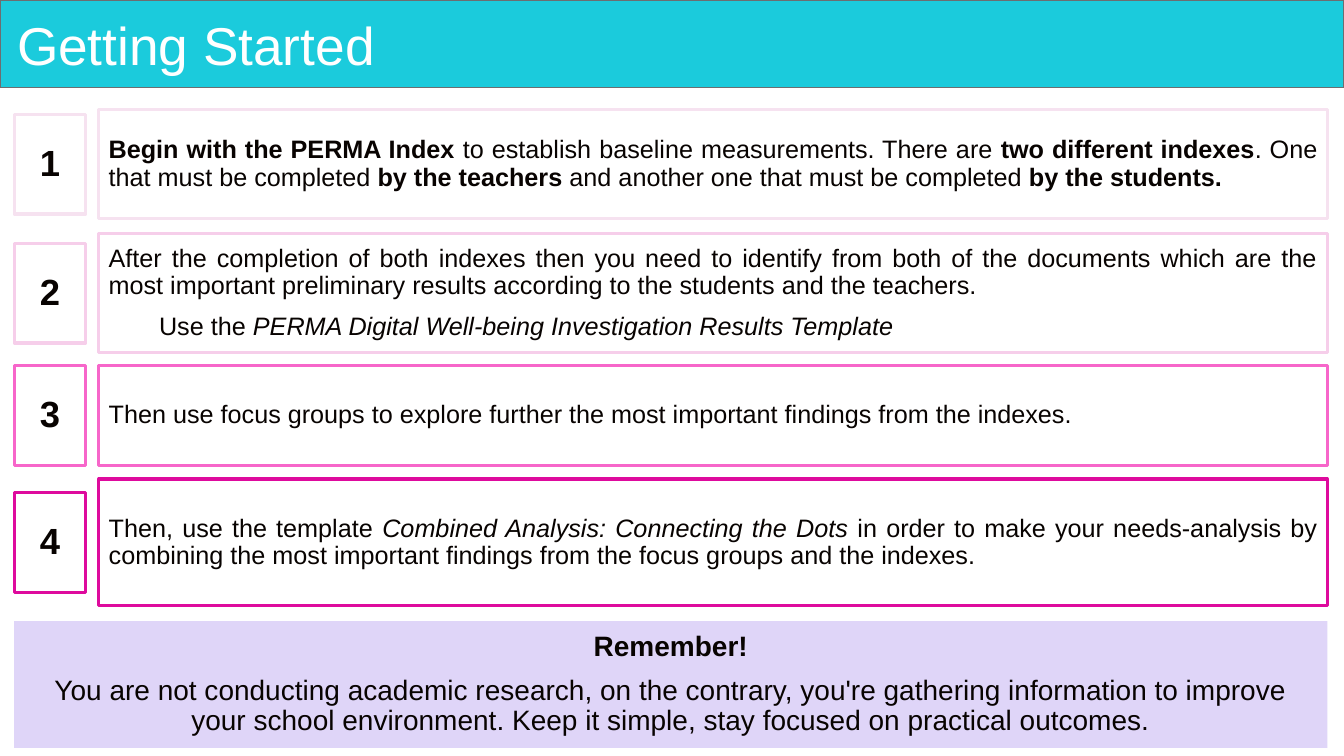
"""Build the Getting Started slide: a title bar, four numbered steps and a reminder."""
from dataclasses import dataclass

import pptx
import pptx.dml.color
import pptx.enum.shapes
import pptx.enum.text
import pptx.util

Cm = pptx.util.Cm
Pt = pptx.util.Pt
Align = pptx.enum.text.PP_ALIGN


@dataclass(frozen=True)
class Theme:
    """Colours, font and type sizes of the slide."""
    font: str = "Arial"
    ink: str = "080301"
    title_ink: str = "FFFFFF"
    bar: str = "1BCBDC"
    bar_line: str = "6C6E70"
    reminder: str = "DFD5F8"
    steps: tuple = ("F6E2F0", "F6CEEA", "F766CA", "DE0A9D")
    title_size: float = 38
    number_size: float = 26
    reminder_size: float = 20
    step_size: float = 18


THEME = Theme()
SLIDE_WIDTH, SLIDE_HEIGHT = 33.87, 19.05
NUMBER_LEFT, NUMBER_WIDTH, NUMBER_HEIGHT = 0.36, 1.8, 2.51
STEP_LEFT, STEP_WIDTH = 2.49, 30.96

STEPS = [
    (2.77, 2.74, [[
        ("Begin with the PERMA Index", "bold"),
        (" to establish baseline measurements. There are ", ""),
        ("two different indexes", "bold"),
        (". One that must be completed ", ""),
        ("by the teachers", "bold"),
        (" and another one that must be completed ", ""),
        ("by the students.", "bold"),
    ]]),
    (5.89, 3.0, [
        [("After the completion of both indexes then you need to identify from both of "
          "the documents which are the most important preliminary results according to "
          "the students and the teachers.", "")],
        [("Use the ", ""),
         ("PERMA Digital Well-being Investigation Results Template", "italic")],
    ]),
    (9.22, 2.51, [[
        ("Then use focus groups to explore further the most important findings from "
         "the indexes.", ""),
    ]]),
    (12.07, 3.2, [[
        ("Then, use the template ", ""),
        ("Combined Analysis: Connecting the Dots", "italic"),
        (" in order to make your needs-analysis by combining the most important "
         "findings from the focus groups and the indexes.", ""),
    ]]),
]

REMINDER = [
    [("Remember!", "bold")],
    [("You are not conducting academic research, on the contrary, you're gathering "
      "information to improve your school environment. Keep it simple, stay focused "
      "on practical outcomes.", "")],
]


def rgb(value):
    """Return a colour from its hexadecimal text."""
    return pptx.dml.color.RGBColor.from_string(value)


def add_box(slide, left, top, width, height, fill=None, line=None, line_width=2.25):
    """Add a flat rectangle, measured in centimetres."""
    shape = slide.shapes.add_shape(
        pptx.enum.shapes.MSO_SHAPE.RECTANGLE, Cm(left), Cm(top), Cm(width), Cm(height))
    shape.shadow.inherit = False
    if fill:
        shape.fill.solid()
        shape.fill.fore_color.rgb = rgb(fill)
    else:
        shape.fill.background()
    if line:
        shape.line.color.rgb = rgb(line)
        shape.line.width = Pt(line_width)
    else:
        shape.line.fill.background()
    return shape


def write(shape, paragraphs, size, align, color=THEME.ink, insets=(0.25, 0.13)):
    """Fill a shape with paragraphs made of (text, style) runs."""
    frame = shape.text_frame
    frame.word_wrap = True
    frame.vertical_anchor = pptx.enum.text.MSO_ANCHOR.MIDDLE
    frame.margin_left = frame.margin_right = Cm(insets[0])
    frame.margin_top = frame.margin_bottom = Cm(insets[1])
    for index, pieces in enumerate(paragraphs):
        paragraph = frame.add_paragraph() if index else frame.paragraphs[0]
        paragraph.alignment = align
        paragraph.line_spacing = 0.9
        paragraph.space_before = Pt(10 if index else 0)
        for text, style in pieces:
            run = paragraph.add_run()
            run.text = text
            run.font.name = THEME.font
            run.font.size = Pt(size)
            run.font.color.rgb = rgb(color)
            run.font.bold = style == "bold"
            run.font.italic = style == "italic"


def indent(paragraph, distance):
    """Set the left indent of a paragraph in centimetres."""
    properties = paragraph._p.get_or_add_pPr()
    properties.set("marL", str(Cm(distance)))
    properties.set("indent", "0")


def add_title(slide, text):
    """Add the title over its full-width bar."""
    add_box(slide, 0, 0, SLIDE_WIDTH, 2.21, THEME.bar, THEME.bar_line, 1)
    title = slide.shapes.add_textbox(Cm(0.28), Cm(0.23), Cm(33.17), Cm(1.98))
    write(title, [[(text, "")]], THEME.title_size, Align.LEFT, THEME.title_ink, (0.15, 0.15))


def add_step(slide, number, color, top, height, paragraphs):
    """Add a step and its number, centred on the same row."""
    step = add_box(slide, STEP_LEFT, top, STEP_WIDTH, height, line=color)
    write(step, paragraphs, THEME.step_size, Align.JUSTIFY)
    for paragraph in step.text_frame.paragraphs[1:]:
        indent(paragraph, 1.27)
    number_top = top + (height - NUMBER_HEIGHT) / 2
    badge = add_box(slide, NUMBER_LEFT, number_top, NUMBER_WIDTH, NUMBER_HEIGHT, line=color)
    write(badge, [[(str(number), "bold")]], THEME.number_size, Align.CENTER)


def add_reminder(slide):
    """Add the closing reminder panel."""
    width = STEP_LEFT + STEP_WIDTH - NUMBER_LEFT
    panel = add_box(slide, NUMBER_LEFT, 15.65, width, 3.2, THEME.reminder)
    write(panel, REMINDER, THEME.reminder_size, Align.CENTER)


def main():
    """Build and save the presentation."""
    presentation = pptx.Presentation()
    presentation.slide_width = Cm(SLIDE_WIDTH)
    presentation.slide_height = Cm(SLIDE_HEIGHT)
    slide = presentation.slides.add_slide(presentation.slide_layouts[6])
    add_title(slide, "Getting Started")
    for number, (color, step) in enumerate(zip(THEME.steps, STEPS), start=1):
        add_step(slide, number, color, *step)
    add_reminder(slide)
    presentation.save("out.pptx")


if __name__ == "__main__":
    main()
